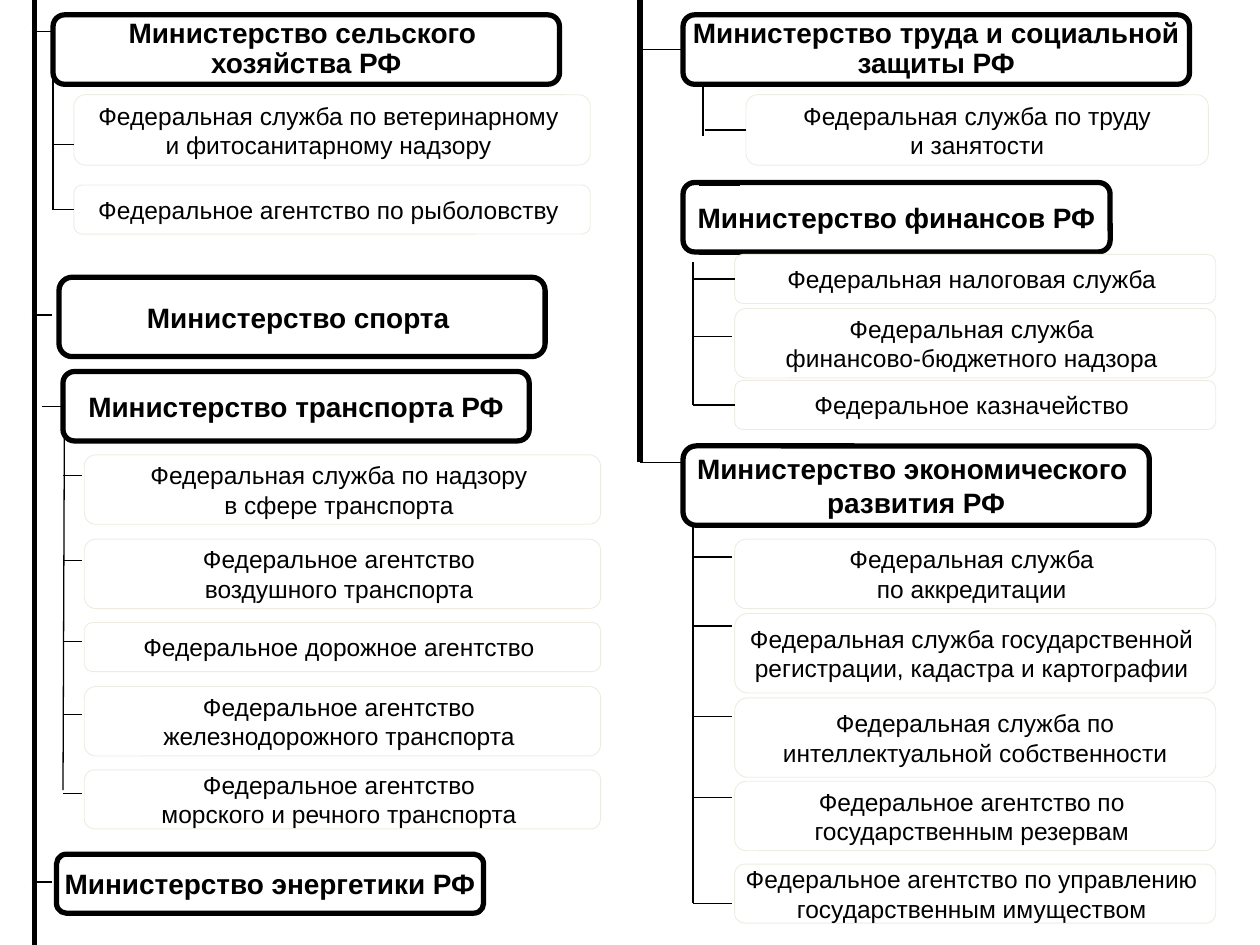
import dataclasses

import lxml.etree
import pptx
import pptx.dml.color
import pptx.enum.shapes
import pptx.enum.text
import pptx.util
from pptx.util import Cm


@dataclasses.dataclass(frozen=True)
class Theme:
    font: str = "Arial"
    ink: str = "000000"
    pale: str = "EEECE1"
    ministry_size: float = 16
    service_size: float = 14
    heavy: float = 3
    thin: float = 0.75
    hairline: float = 0.5


theme = Theme()
prs = pptx.Presentation()
prs.slide_width, prs.slide_height = Cm(25.4), Cm(19.05)
slide = prs.slides.add_slide(prs.slide_layouts[6])


def add_box(left, top, width, height, lines, is_ministry, spacing=None):
    box = slide.shapes.add_shape(
        pptx.enum.shapes.MSO_SHAPE.ROUNDED_RECTANGLE,
        Cm(left), Cm(top), Cm(width), Cm(height))
    box.shadow.inherit = False
    box.fill.background()
    box.line.color.rgb = pptx.dml.color.RGBColor.from_string(
        theme.ink if is_ministry else theme.pale)
    box.line.width = pptx.util.Pt(theme.heavy if is_ministry else theme.hairline)
    frame = box.text_frame
    frame.word_wrap = False
    frame.vertical_anchor = pptx.enum.text.MSO_ANCHOR.MIDDLE
    for number, line in enumerate(lines):
        paragraph = frame.add_paragraph() if number else frame.paragraphs[0]
        paragraph.alignment = pptx.enum.text.PP_ALIGN.CENTER
        if spacing:
            paragraph.line_spacing = spacing
        run = paragraph.add_run()
        run.text = line
        run.font.name = theme.font
        run.font.size = pptx.util.Pt(theme.ministry_size if is_ministry else theme.service_size)
        run.font.bold = is_ministry
        run.font.color.rgb = pptx.dml.color.RGBColor.from_string(theme.ink)
    return box


def add_line(x1, y1, x2, y2, weight=theme.thin, target=None):
    """Draw a line; with a target, end it at the middle of the target's left side."""
    line = slide.shapes.add_connector(
        pptx.enum.shapes.MSO_CONNECTOR.STRAIGHT, Cm(x1), Cm(y1), Cm(x2), Cm(y2))
    line.line.color.rgb = pptx.dml.color.RGBColor.from_string(theme.ink)
    line.line.width = pptx.util.Pt(weight)
    lxml.etree.SubElement(
        line.element.spPr, "{http://schemas.openxmlformats.org/drawingml/2006/main}effectLst")
    if target is not None:
        line.begin_y = target.top + target.height // 2
        line.end_connect(target, 1)


# Lengths in cm. A branch height of None means the middle of the box.
# ministry: left, top, width, height, lines, line spacing
# link: start x, end x, y; stem: x1, y1, x2, y2; branch: start x, end x
# column: left, width; services: top, height, branch y, lines
MIDDLE = None
departments = [
    dict(ministry=(1.07, 0.3, 10.21, 1.4, ["Министерство сельского ", "хозяйства РФ"], 0.9),
         link=(0.64, 1.04, 0.64), stem=(1.07, 0.64, 1.07, 4.24),
         branch=(1.09, 1.49), column=(1.49, 10.41), services=[
             (1.91, 1.42, 2.92, ["Федеральная служба по ветеринарному ",
                                 "и фитосанитарному надзору "]),
             (3.73, 0.99, MIDDLE, ["Федеральное агентство по рыболовству "])]),
    dict(ministry=(1.19, 5.59, 9.8, 1.6, ["Министерство спорта "], None),
         link=(0.64, 1.04, 6.35)),
    dict(ministry=(1.27, 7.49, 9.4, 1.4, ["Министерство транспорта РФ"], None),
         link=(0.84, 1.27, MIDDLE), stem=(1.3, 8.05, 1.27, 15.93),
         branch=(1.27, 1.66), column=(1.7, 10.41), services=[
             (9.17, 1.4, 9.58, ["Федеральная служба по надзору ", "в сфере транспорта "]),
             (10.87, 1.4, 11.3, ["Федеральное агентство ", "воздушного транспорта "]),
             (12.55, 0.99, 12.93, ["Федеральное дорожное агентство "]),
             (13.84, 1.4, 14.4, ["Федеральное агентство ", "железнодорожного транспорта "]),
             (15.52, 1.19, 16, ["Федеральное агентство ",
                                "морского и речного транспорта "])]),
    dict(ministry=(1.14, 17.22, 8.61, 1.19, ["Министерство энергетики РФ"], None),
         link=(0.64, 1.04, 17.78)),
    dict(ministry=(13.77, 0.3, 10.21, 1.4,
                   ["Министерство труда и социальной", "защиты РФ"], 0.9),
         link=(12.9, 13.77, MIDDLE), stem=(14.17, 1.7, 14.17, 2.74),
         branch=(14.22, 15.04), column=(15.04, 9.32), services=[
             (1.91, 1.42, MIDDLE, ["Федеральная служба по труду", "и занятости"])]),
    dict(ministry=(13.77, 3.68, 8.61, 1.4, ["Министерство финансов РФ"], None),
         stem=(13.97, 5.28, 13.97, 8.17),
         branch=(13.97, 14.76), column=(14.81, 9.7), services=[
             (5.13, 0.99, MIDDLE, ["Федеральная налоговая служба "]),
             (6.22, 1.4, 6.78, ["Федеральная служба ", "финансово-бюджетного надзора "]),
             (7.67, 0.99, MIDDLE, ["Федеральное казначейство "])]),
    dict(ministry=(13.77, 8.99, 9.4, 1.6,
                   ["Министерство экономического ", "развития РФ"], None),
         link=(12.9, 13.72, 9.32), stem=(13.97, 10.59, 13.97, 18.21),
         branch=(13.97, 14.76), column=(14.81, 9.7), services=[
             (10.87, 1.4, 11.23, ["Федеральная служба ", "по аккредитации "]),
             (12.37, 1.6, 12.62, ["Федеральная служба государственной ",
                                  "регистрации, кадастра и картографии "]),
             (14.07, 1.6, 14.45, ["Федеральная служба по",
                                  " интеллектуальной собственности "]),
             (15.75, 1.4, 16.08, ["Федеральное агентство по ", "государственным резервам "]),
             (17.42, 1.19, 18.21, ["Федеральное агентство по управлению ",
                                   "государственным имуществом "])]),
]

# Trunks of the two columns
for trunk_x, trunk_end in ((0.69, 19.05), (12.9, 9.32)):
    add_line(trunk_x, 0, trunk_x, trunk_end, theme.heavy)

# Short strokes along the edges of the finance ministry
for stroke_y in (3.73, 5.13):
    add_line(14.1, stroke_y, 14.91, stroke_y)

# Ministries with their services
for department in departments:
    left, top, width, height, lines, spacing = department["ministry"]
    ministry = add_box(left, top, width, height, lines, True, spacing)
    if "link" in department:
        start, end, y = department["link"]
        add_line(start, y or 0, end, y or 0, target=ministry if y is MIDDLE else None)
    if "stem" in department:
        add_line(*department["stem"])
    for top, height, y, lines in department.get("services", []):
        left, width = department["column"]
        start, end = department["branch"]
        service = add_box(left, top, width, height, lines, False)
        add_line(start, y or 0, end, y or 0, target=service if y is MIDDLE else None)

prs.save("out.pptx")
